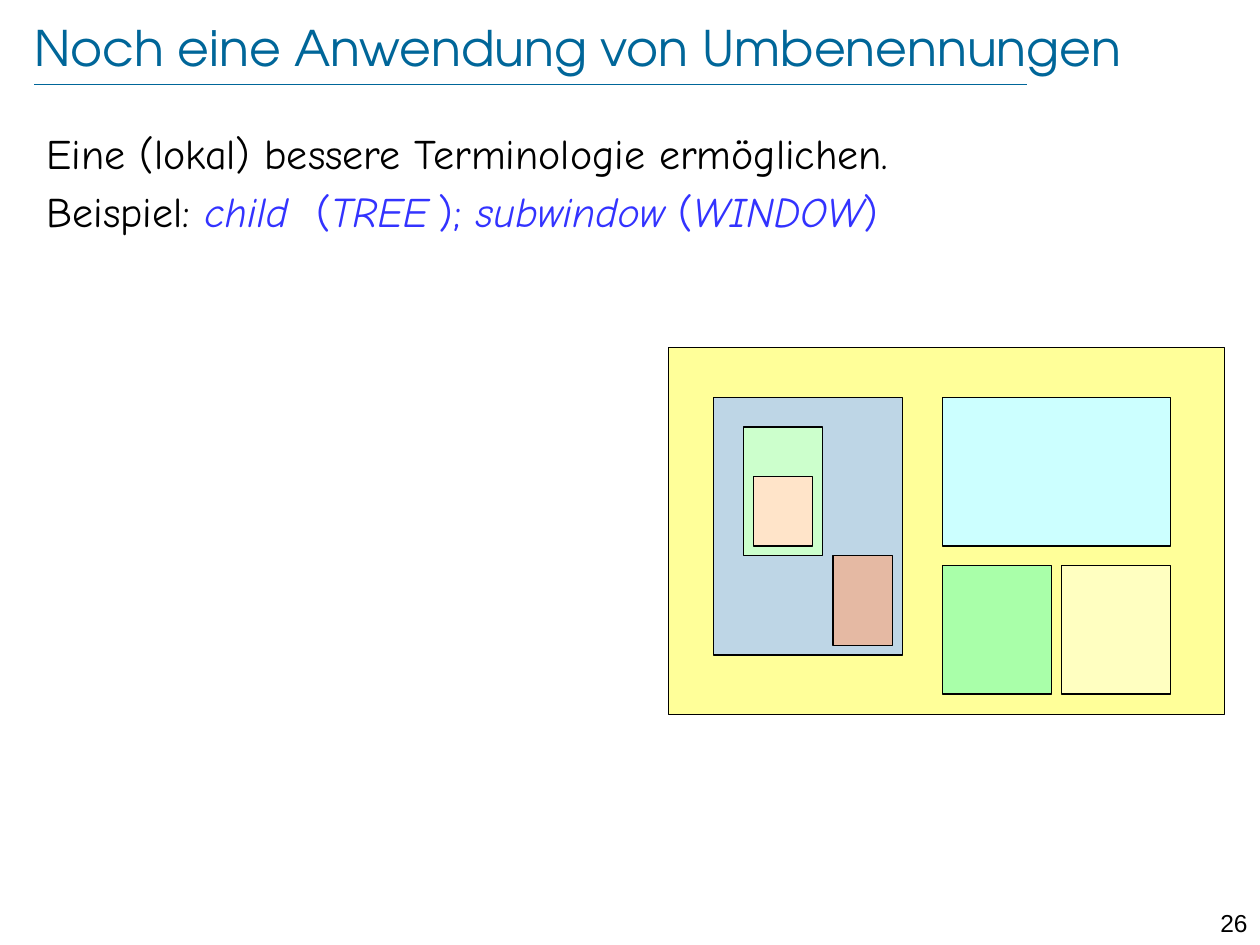
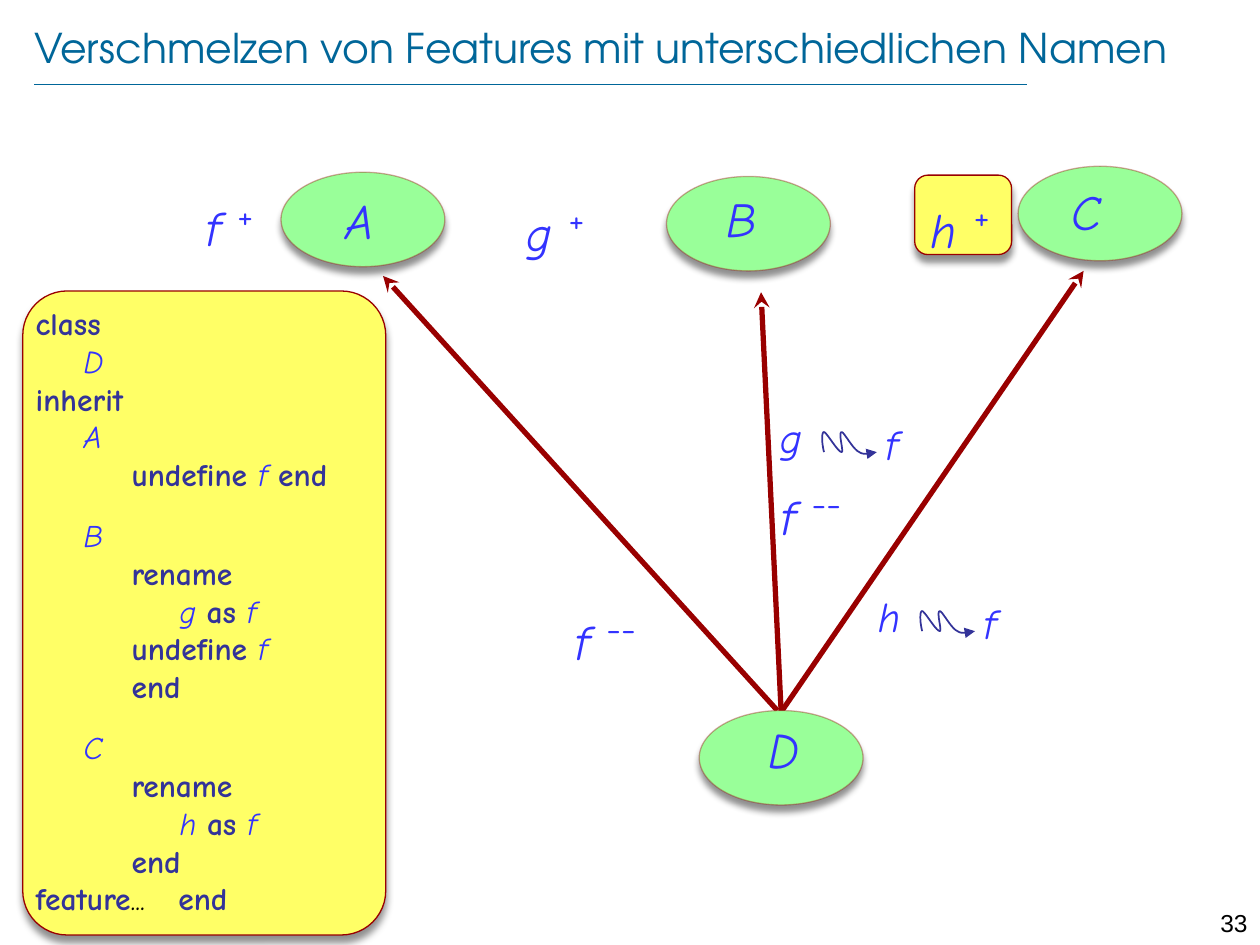
from dataclasses import dataclass, replace
from pptx import Presentation
from pptx.dml.color import RGBColor
from pptx.enum.shapes import MSO_CONNECTOR as Link, MSO_SHAPE as Preset
from pptx.enum.text import MSO_ANCHOR as Anchor, PP_ALIGN as Align
from pptx.oxml import parse_xml
from pptx.oxml.ns import nsdecls
from pptx.util import Pt


@dataclass(frozen=True)
class Look:
    font: str
    size: float
    color: str
    bold: bool = False
    italic: bool = False
    raised: int = 0


@dataclass(frozen=True)
class Theme:
    rule: str = "006699"
    outline: str = "000000"
    accent: str = "990000"
    squiggle: str = "333399"
    oval: str = "99FF99"
    note: str = "FFFF66"
    title: Look = Look("TeX Gyre Adventor", 28, "006699")
    number: Look = Look("Arial", 14, "000000")
    body: Look = Look("Comic Neue", 24, "000000")
    upright: Look = Look("Comic Neue", 24, "3333FF")
    name: Look = Look("Comic Neue", 24, "3333FF", italic=True)
    letter: Look = Look("Comic Neue", 28, "3333FF", italic=True)
    mark: Look = Look("Comic Neue", 36, "3333FF", raised=30000)
    keyword: Look = Look("Comic Neue", 18, "333399", bold=True)
    code_name: Look = Look("Comic Neue", 18, "3333FF", italic=True)
    code_dots: Look = Look("Comic Neue", 18, "000000")


theme = Theme()


def write(box, lines, inset=None, align=Align.LEFT, anchor=Anchor.TOP):
    frame = box.text_frame
    frame.word_wrap = True
    frame.vertical_anchor = anchor
    if inset is not None:
        frame.margin_left = frame.margin_right = Pt(inset)
        frame.margin_top = frame.margin_bottom = Pt(inset)
    for index, line in enumerate(lines):
        para = frame.add_paragraph() if index else frame.paragraphs[0]
        para.alignment = align
        for text, look in line:
            span = para.add_run()
            span.text = text
            span.font.name = look.font
            span.font.size = Pt(look.size)
            span.font.bold = look.bold
            span.font.italic = look.italic
            span.font.color.rgb = RGBColor.from_string(look.color)
            if look.raised:
                span._r.get_or_add_rPr().set("baseline", str(look.raised))
    return frame.paragraphs


def draw(page, preset, place, fill=None, outline=None, shadow=False):
    shape = page.shapes.add_shape(preset, *map(Pt, place))
    shape.shadow.inherit = False
    if fill:
        shape.fill.solid()
        shape.fill.fore_color.rgb = RGBColor.from_string(fill)
        shape.line.color.rgb = RGBColor.from_string(outline)
        shape.line.width = Pt(0.75)
    else:
        shape.fill.background()
        shape.line.fill.background()
    if shadow:
        shape._element.spPr.find("{*}effectLst").append(parse_xml(
            f'<a:outerShdw {nsdecls("a")} blurRad="{Pt(4)}" dist="{Pt(4)}" dir="5400000" '
            'rotWithShape="0"><a:srgbClr val="000000"><a:alpha val="43000"/></a:srgbClr></a:outerShdw>'))
    return shape


deck = Presentation()
deck.slide_width, deck.slide_height = Pt(720), Pt(540)

pages = []
for heading, size, number in (
    ("Noch eine Anwendung von Umbenennungen", 28, "26"),
    ("Verschmelzen von Features mit unterschiedlichen Namen", 23.4, "33"),
):
    page = deck.slides.add_slide(deck.slide_layouts[6])
    rule = page.shapes.add_connector(Link.STRAIGHT, Pt(19.5), Pt(48.2), Pt(586.8), Pt(48.2))
    rule.line.color.rgb = RGBColor.from_string(theme.rule)
    rule.line.width = Pt(0.25)
    rule._element.spPr.append(parse_xml(f'<a:effectLst {nsdecls("a")}/>'))
    box = page.shapes.add_textbox(Pt(680.4), Pt(515.5), Pt(39.6), Pt(17.3))
    write(box, [[(number, theme.number)]], align=Align.RIGHT)
    box = page.shapes.add_textbox(Pt(19.5), Pt(9.4), Pt(670), Pt(34.5))
    write(box, [[(heading, replace(theme.title, size=size))]], inset=0, anchor=Anchor.MIDDLE)
    pages.append(page)
windows_page, merge_page = pages

box = windows_page.shapes.add_textbox(Pt(19.5), Pt(69.1), Pt(677), Pt(444))
paras = write(box, [
    [("Eine (lokal) bessere Terminologie ermöglichen.", theme.body)],
    [("Beispiel: ", theme.body), ("child ", theme.name), (" (", theme.upright),
     ("TREE", theme.name), (" ", replace(theme.name, size=18)), ("); ", theme.upright),
     ("subwindow", theme.name), (" (", theme.upright), ("WINDOW", theme.name),
     (")", theme.upright)],
])
paras[1].space_before = Pt(4.8)

for place, fill in (
    ((382, 198.6, 317.8, 209.6), "FFFF99"),
    ((407.6, 227, 108, 147.4), "BED6E6"),
    ((424.8, 244, 45.4, 73.6), "CCFFCC"),
    ((430.4, 272.2, 34, 39.8), "FFE4C9"),
    ((476, 317.6, 34, 51.2), "E5B9A3"),
    ((538.4, 227, 130.4, 85), "CCFFFF"),
    ((538.4, 323, 62.4, 73.6), "A9FFA9"),
    ((606.4, 323, 62.4, 73.6), "FFFFC1"),
):
    draw(windows_page, Preset.RECTANGLE, place, fill, theme.outline)

for start, end in (
    ((446.4, 407.5), (434.9, 167)),
    ((444.2, 406), (218.9, 157.7)),
    ((446.4, 406.8), (619.2, 154.8)),
):
    arrow = merge_page.shapes.add_connector(Link.STRAIGHT, *map(Pt, start + end))
    arrow.line.color.rgb = RGBColor.from_string(theme.accent)
    arrow.line.width = Pt(3)
    arrow.line._get_or_add_ln().append(parse_xml(f'<a:tailEnd {nsdecls("a")} type="stealth"/>'))
    arrow._element.spPr.append(parse_xml(f'<a:effectLst {nsdecls("a")}/>'))

for class_name, left, top, text_left, text_top in (
    ("A", 160.6, 98.4, 182.9, 105.1),
    ("B", 380.9, 100.8, 401, 104.4),
    ("C", 581.8, 95, 598.3, 100.1),
    ("D", 399.6, 406, 425.5, 407.5),
):
    oval = draw(merge_page, Preset.OVAL, (left, top, 93.6, 54), theme.oval, theme.accent, True)
    oval.line._get_or_add_ln().find(".//{*}srgbClr").append(
        parse_xml(f'<a:alpha {nsdecls("a")} val="34000"/>'))
    box = merge_page.shapes.add_textbox(Pt(text_left), Pt(text_top), Pt(45.4), Pt(41))
    write(box, [[(class_name, theme.letter)]], align=Align.CENTER)

for feature, mark, left, top, width, boxed in (
    ("h ", "+", 522.7, 100.1, 55.4, True),
    ("f ", "+", 108.7, 99.4, 59.8, False),
    ("g ", "+", 291.6, 102.2, 54.7, False),
    ("f ", "--", 319.7, 335.5, 70.6, False),
    ("f ", "--", 437, 264.2, 70.6, False),
):
    fill = theme.note if boxed else None
    label = draw(merge_page, Preset.ROUNDED_RECTANGLE, (left, top, width, 45.4),
                 fill, theme.accent, boxed)
    write(label, [[(feature, theme.letter), (mark, theme.mark)]])

keyword, code_name = theme.keyword, theme.code_name
listing = (
    (0, 0, [("class", keyword)]),
    (1, 0, [("D", code_name)]),
    (0, 0, [("inherit", keyword)]),
    (1, 0, [("A", code_name)]),
    (2, 0, [("undefine ", keyword), ("f ", code_name), ("end", keyword)]),
    (1, 13.2, [("B", code_name)]),
    (2, 0, [("rename", keyword)]),
    (3, 0, [("g ", code_name), ("as ", keyword), ("f", code_name)]),
    (2, 0, [("undefine ", keyword), ("f", code_name)]),
    (2, 0, [("end", keyword)]),
    (1, 13.2, [("C", code_name)]),
    (2, 0, [("rename", keyword)]),
    (3, 0, [("h ", code_name), ("as ", keyword), ("f", code_name)]),
    (2, 0, [("end", keyword)]),
    (0, 0, [("feature", keyword), ("...\t", theme.code_dots), ("end", keyword)]),
)
code = draw(merge_page, Preset.ROUNDED_RECTANGLE, (13, 166.3, 207.4, 368),
            theme.note, theme.accent, True)
code.adjustments[0] = 0.122
paras = write(code, [line for level, gap, line in listing], inset=0)
for para, (level, gap, line) in zip(paras, listing):
    para._p.get_or_add_pPr().set("marL", str(Pt(27.4 * level)))
    if gap:
        para.space_before = Pt(gap)
paras[-1]._p.get_or_add_pPr().append(parse_xml(
    f'<a:tabLst {nsdecls("a")}><a:tab pos="{Pt(81.5)}" algn="l"/></a:tabLst>'))

wave_start = (32.4, 26.6)
wave = (
    ((31, 20.9), (31, 15.1), (32.4, 15.1)),
    ((33.8, 15.1), (40.3, 26.6), (42.5, 26.6)),
    ((43.9, 26.6), (40.3, 15.1), (42.5, 15.1)),
    ((43.9, 15.1), (49, 25.2), (52.6, 26.6)),
    ((55.4, 28.8), (61.2, 26.6), (62.6, 26.6)),
)
steps = 10
for old_name, left, top in (("h", 494.6, 334.1), ("g", 438.5, 231.8)):
    group = merge_page.shapes.add_group_shape()
    points = [wave_start]
    for bend_out, bend_in, end in wave:
        start = points[-1]
        for step in range(1, steps + 1):
            t = step / steps
            weights = ((1 - t) ** 3, 3 * t * (1 - t) ** 2, 3 * t * t * (1 - t), t ** 3)
            corners = (start, bend_out, bend_in, end)
            points.append(tuple(sum(w * c[axis] for w, c in zip(weights, corners))
                                for axis in (0, 1)))
    points = [(Pt(left + x), Pt(top + y)) for x, y in points]
    builder = group.shapes.build_freeform(*points[0])
    builder.add_line_segments(points[1:], close=False)
    squiggle = builder.convert_to_shape()
    squiggle.shadow.inherit = False
    squiggle.fill.background()
    squiggle.line.color.rgb = RGBColor.from_string(theme.squiggle)
    squiggle.line.width = Pt(1)
    squiggle.line._get_or_add_ln().append(
        parse_xml(f'<a:tailEnd {nsdecls("a")} type="triangle"/>'))
    for text, shift_x, shift_y in ((old_name, 0, 0), ("f", 60.5, 3.6)):
        box = group.shapes.add_textbox(Pt(left + shift_x), Pt(top + shift_y), Pt(27.4), Pt(36))
        write(box, [[(text, theme.name)]])

deck.save("out.pptx")
